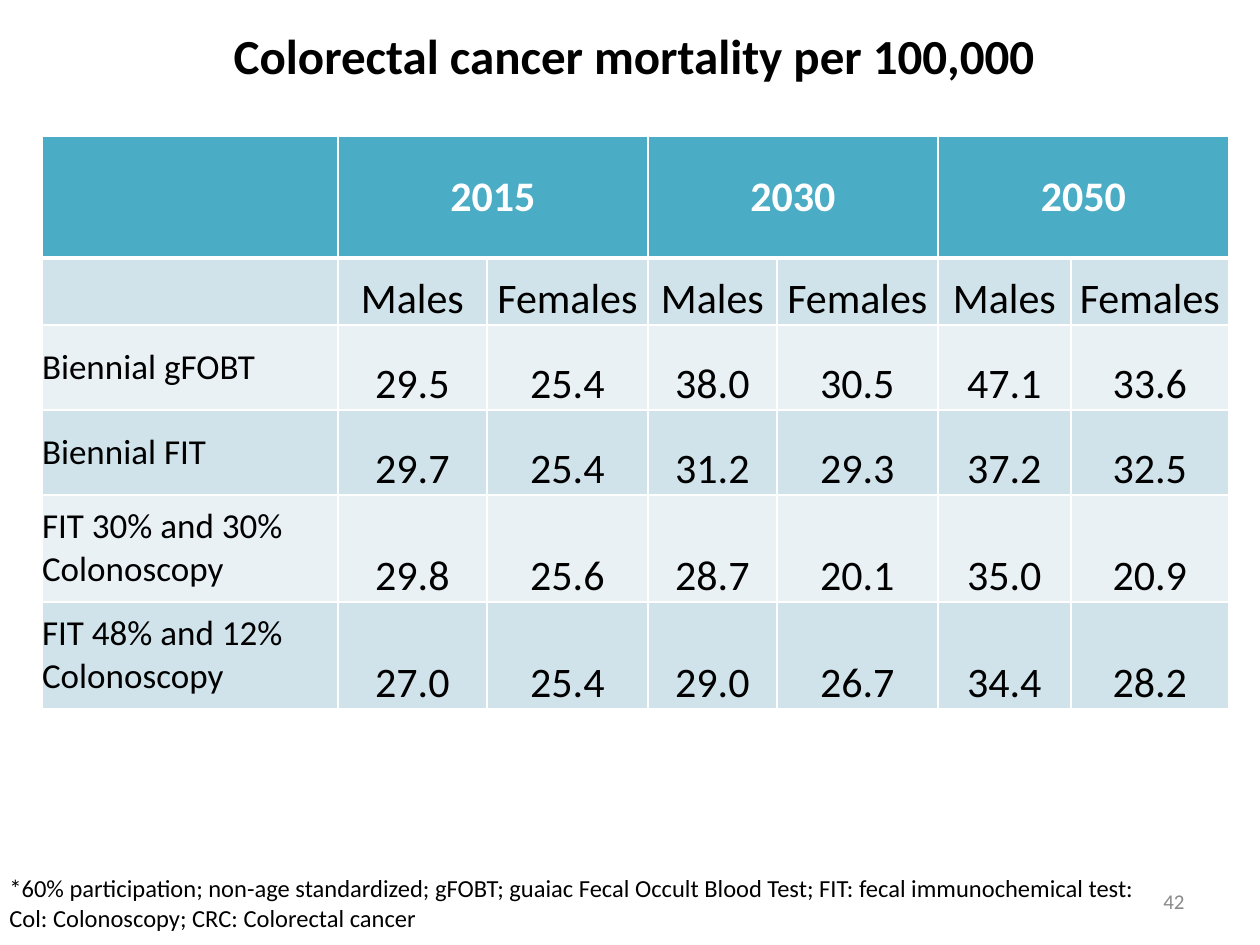
"""Build the colorectal cancer mortality slide with its screening comparison table."""
import pptx
import pptx.dml.color
import pptx.enum.text
import pptx.oxml
import pptx.oxml.ns
import pptx.util

RGB = pptx.dml.color.RGBColor
ALIGN = pptx.enum.text.PP_ALIGN
ANCHOR = pptx.enum.text.MSO_ANCHOR

TITLE = "Colorectal cancer mortality per 100,000"
YEARS = ["2015", "2030", "2050"]
SEXES = ["Males", "Females"]
MORTALITY = [
    ("Biennial gFOBT", ["29.5", "25.4", "38.0", "30.5", "47.1", "33.6"]),
    ("Biennial FIT", ["29.7", "25.4", "31.2", "29.3", "37.2", "32.5"]),
    ("FIT 30% and 30% Colonoscopy", ["29.8", "25.6", "28.7", "20.1", "35.0", "20.9"]),
    ("FIT 48% and 12% Colonoscopy", ["27.0", "25.4", "29.0", "26.7", "34.4", "28.2"]),
]
FOOTNOTE = [
    "*60% participation; non-age standardized; gFOBT; guaiac Fecal Occult Blood Test; "
    "FIT: fecal immunochemical test:",
    "Col: Colonoscopy; CRC: Colorectal cancer",
]
PAGE_NUMBER = "42"

COLUMN_WIDTHS = [296, 149, 161, 129, 161, 133, 158]
ROW_HEIGHTS = [122, 67, 85, 85, 107, 107]

FONT = "Calibri"
BLACK = RGB(0x00, 0x00, 0x00)
WHITE = RGB(0xFF, 0xFF, 0xFF)
GREY = RGB(0x89, 0x89, 0x89)
TEAL = RGB(0x4B, 0xAC, 0xC6)
BANDS = [RGB(0xD0, 0xE3, 0xEA), RGB(0xE9, 0xF1, 0xF5)]


def px(length):
    return pptx.util.Emu(round(length * 914400 / 126))


def write(frame, lines, size, color, align, bold=False):
    frame.text = "\n".join(lines)
    for paragraph in frame.paragraphs:
        paragraph.alignment = align
        font = paragraph.font
        font.name, font.size, font.bold = FONT, pptx.util.Pt(size), bold
        font.color.rgb = color


def add_note(slide, box, lines, size, color, align, anchor, wrap):
    frame = slide.shapes.add_textbox(*map(px, box)).text_frame
    frame.word_wrap, frame.vertical_anchor = wrap, anchor
    write(frame, lines, size, color, align)


def style_cell(cell, fill, inset, anchor, edge_widths):
    properties = cell._tc.get_or_add_tcPr()
    for edge, points in edge_widths.items():
        properties.append(pptx.oxml.parse_xml(
            f'<a:ln{edge} {pptx.oxml.ns.nsdecls("a")} w="{pptx.util.Pt(points)}">'
            f'<a:solidFill><a:srgbClr val="{WHITE}"/></a:solidFill></a:ln{edge}>'))
    cell.fill.solid()
    cell.fill.fore_color.rgb = fill
    cell.margin_left = cell.margin_top = cell.margin_right = px(inset)
    cell.margin_bottom = 0
    cell.vertical_anchor = anchor


def add_mortality_table(slide):
    rows = [[""] + [text for year in YEARS for text in (year, "")],
            [""] + SEXES * len(YEARS)]
    rows += [[strategy] + rates for strategy, rates in MORTALITY]
    table = slide.shapes.add_table(
        len(rows), len(COLUMN_WIDTHS), px(42), px(136),
        px(sum(COLUMN_WIDTHS)), px(sum(ROW_HEIGHTS))).table
    for column, width in zip(table.columns, COLUMN_WIDTHS):
        column.width = px(width)
    for row, height in zip(table.rows, ROW_HEIGHTS):
        row.height = px(height)

    for r, texts in enumerate(rows):
        header = r == 0
        edges = {"L": 1, "R": 1, "T": 3 if r == 1 else 1, "B": 3 if header else 1}
        for c, text in enumerate(texts):
            cell = table.cell(r, c)
            label = c == 0
            style_cell(cell, TEAL if header else BANDS[(r - 1) % 2],
                       0 if label or r == 1 else 1,
                       ANCHOR.MIDDLE if header or label else ANCHOR.BOTTOM, edges)
            if text:
                write(cell.text_frame, [text], 20 if label else 24,
                      WHITE if header else BLACK,
                      ALIGN.LEFT if label else ALIGN.CENTER, header)
    for first in range(1, len(COLUMN_WIDTHS), len(SEXES)):
        table.cell(0, first).merge(table.cell(0, first + len(SEXES) - 1))


def main():
    deck = pptx.Presentation()
    deck.slide_width, deck.slide_height = px(1260), px(945)
    slide = deck.slides.add_slide(deck.slide_layouts[5])

    title = slide.shapes.title
    title.left, title.top, title.width, title.height = map(px, (67, 4, 1134, 102))
    title.text_frame.vertical_anchor = ANCHOR.MIDDLE
    write(title.text_frame, [TITLE], 28, BLACK, ALIGN.CENTER, True)

    add_mortality_table(slide)
    add_note(slide, (903, 876, 294, 50), [PAGE_NUMBER], 12, GREY,
             ALIGN.RIGHT, ANCHOR.MIDDLE, True)
    add_note(slide, (-3, 867, 1260, 69), FOOTNOTE, 14, BLACK,
             ALIGN.LEFT, ANCHOR.TOP, False)
    deck.save("out.pptx")


if __name__ == "__main__":
    main()
